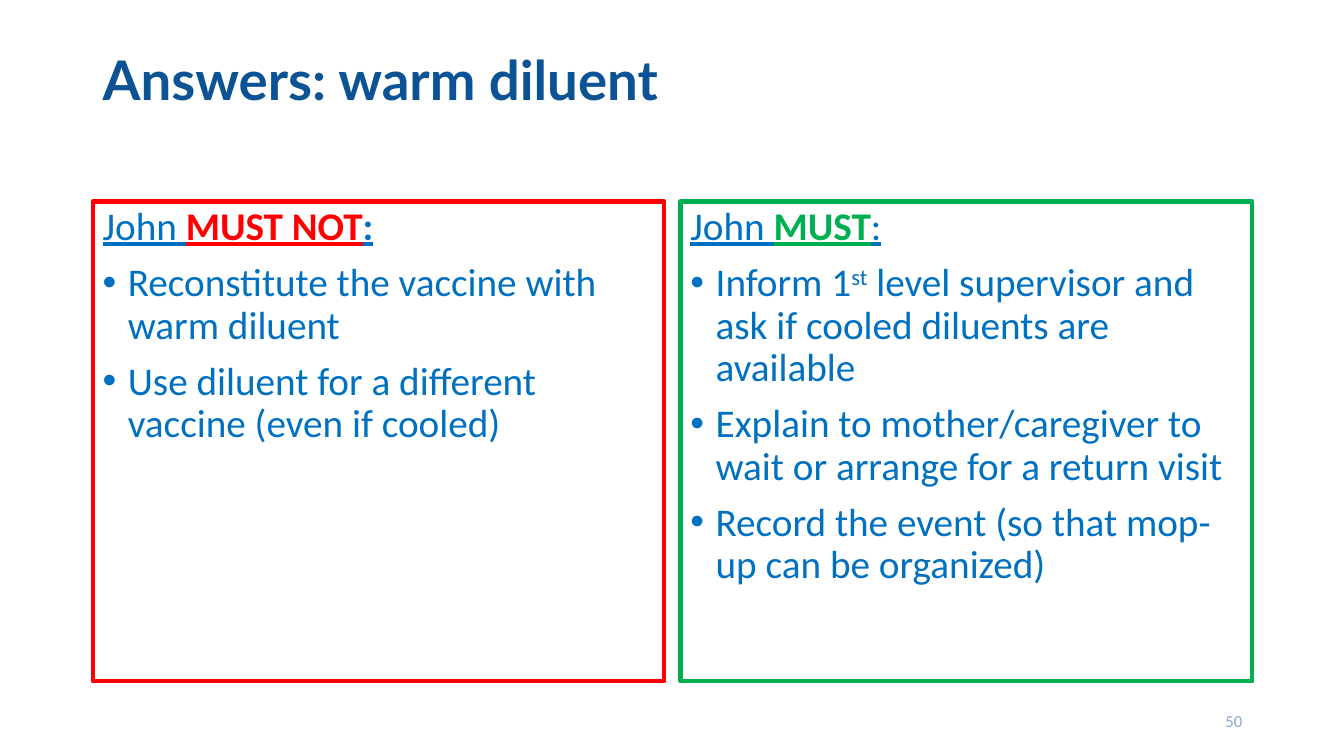
from lxml.etree import SubElement
from pptx import Presentation
from pptx.dml.color import RGBColor
from pptx.enum.shapes import MSO_SHAPE
from pptx.enum.text import MSO_ANCHOR as Anchor, PP_ALIGN as Align
from pptx.oxml.ns import qn
from pptx.util import Inches, Pt

COLORS = {
    "title": "0B5394",
    "body": "0070C0",
    "forbidden": "FF0000",
    "required": "00B050",
    "page": "8CA4D2",
}
MARGIN, CONTENT_WIDTH = 0.92, 11.5
PANEL_TOP, PANEL_WIDTH, PANEL_HEIGHT, PANEL_GAP = 2, 5.67, 4.76, 0.16


def rgb(name):
    return RGBColor.from_string(COLORS[name])


def add_text(paragraph, text, color="body", size=28, font="Calibri",
             bold=False, underline=False, superscript=False):
    run = paragraph.add_run()
    run.text = text
    run.font.name = font
    run.font.size = Pt(size)
    run.font.bold = bold
    run.font.underline = underline
    run.font.color.rgb = rgb(color)
    if superscript:
        run.font._element.set("baseline", "30000")


def format_panel_line(paragraph, bullet):
    paragraph.alignment = Align.LEFT
    paragraph.line_spacing = 0.9
    paragraph.space_before = Pt(10)
    properties = paragraph._p.get_or_add_pPr()
    properties.set("marL", str(Inches(0.25)))
    properties.set("indent", str(Inches(-0.25)))
    if bullet:
        SubElement(properties, qn("a:buFont")).set("typeface", "Arial")
        SubElement(properties, qn("a:buChar")).set("char", "•")
    else:
        SubElement(properties, qn("a:buNone"))


def text_line(slide, box, text, align=Align.LEFT, line_spacing=1.0, **style):
    """Add one vertically centred line of text in the given box."""
    frame = slide.shapes.add_textbox(*map(Inches, box)).text_frame
    frame.word_wrap = True
    frame.vertical_anchor = Anchor.MIDDLE
    paragraph = frame.paragraphs[0]
    paragraph.alignment = align
    paragraph.line_spacing = line_spacing
    add_text(paragraph, text, **style)


def answer_panel(slide, box, duty, accent, bold_colon, answers):
    """Add an outlined panel: a heading, then bullets made of (text, format) runs."""
    panel = slide.shapes.add_shape(MSO_SHAPE.RECTANGLE, *map(Inches, box))
    panel.shadow.inherit = False
    panel.fill.background()
    panel.line.color.rgb = rgb(accent)
    panel.line.width = Pt(3)
    frame = panel.text_frame
    frame.word_wrap = True
    frame.vertical_anchor = Anchor.TOP

    heading = frame.paragraphs[0]
    format_panel_line(heading, bullet=False)
    add_text(heading, "John ", underline=True)
    add_text(heading, duty, color=accent, bold=True, underline=True)
    add_text(heading, ":", bold=bold_colon, underline=True)

    for answer in answers:
        paragraph = frame.add_paragraph()
        format_panel_line(paragraph, bullet=True)
        for text, style in answer:
            add_text(paragraph, text, **style)


def main():
    prs = Presentation()
    prs.slide_width, prs.slide_height = Inches(13.33), Inches(7.5)
    slide = prs.slides.add_slide(prs.slide_layouts[6])

    text_line(slide, (MARGIN, 0.4, CONTENT_WIDTH, 0.85), "Answers: warm diluent",
              line_spacing=0.9, color="title", size=39, font="Lato", bold=True)

    panels = [
        ("MUST NOT", "forbidden", True, [
            [("Reconstitute the vaccine with warm diluent", {})],
            [("Use diluent for a different vaccine (even if cooled)", {})],
        ]),
        ("MUST", "required", False, [
            [("Inform 1", {}), ("st", {"superscript": True}),
             (" level supervisor and ask if cooled diluents are available", {})],
            [("Explain to mother/caregiver to wait or arrange for a return visit", {})],
            [("Record the event (so that mop-up can be organized)", {})],
        ]),
    ]
    for column, panel in enumerate(panels):
        left = MARGIN + column * (PANEL_WIDTH + PANEL_GAP)
        answer_panel(slide, (left, PANEL_TOP, PANEL_WIDTH, PANEL_HEIGHT), *panel)

    text_line(slide, (MARGIN + CONTENT_WIDTH - 3, 6.95, 3, 0.4), "50",
              align=Align.RIGHT, color="page", size=12)
    prs.save("out.pptx")


if __name__ == "__main__":
    main()
